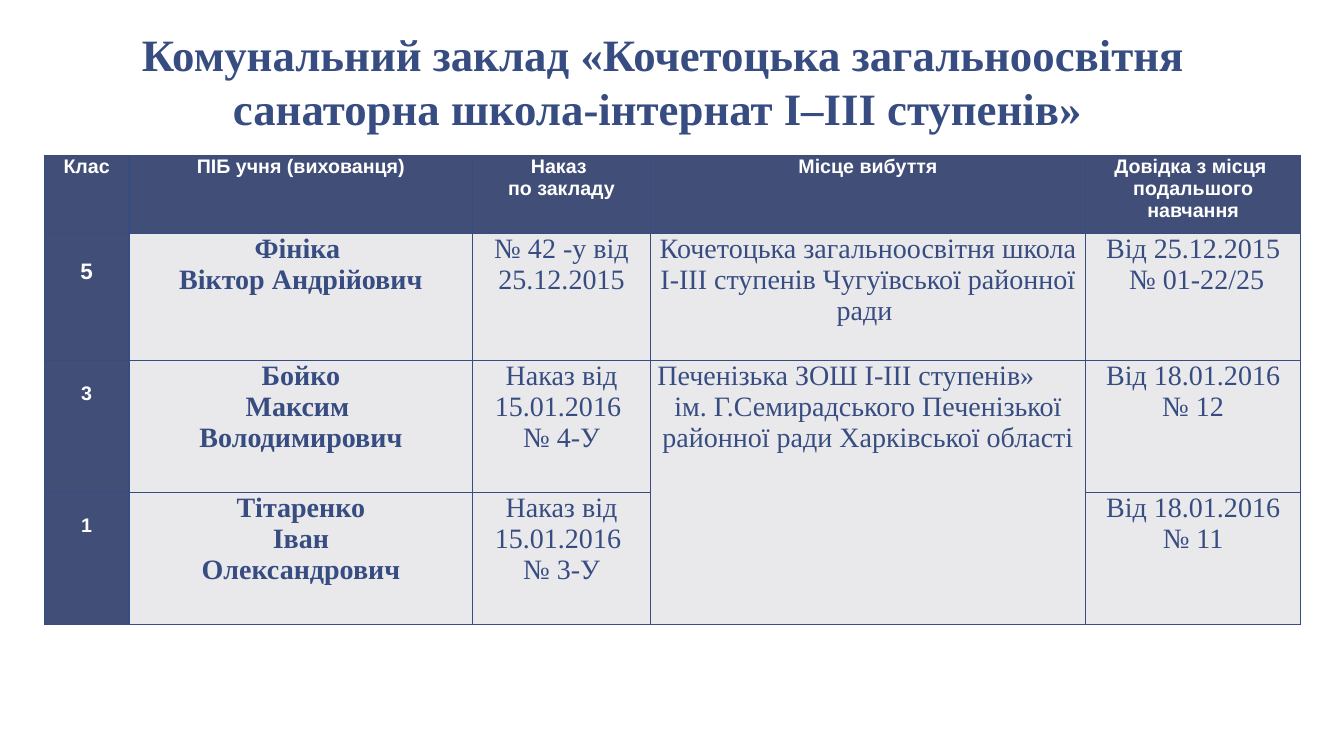
import dataclasses

import lxml.etree
import pptx
import pptx.dml.color
import pptx.enum.text
import pptx.oxml.ns
import pptx.util

Inches = pptx.util.Inches
Pt = pptx.util.Pt
CENTER = pptx.enum.text.PP_ALIGN.CENTER


@dataclasses.dataclass(frozen=True)
class Theme:
    ink: str = "374C81"
    band: str = "414E77"
    paper: str = "E9E9EC"
    white: str = "FFFFFF"
    serif: str = "Times New Roman"
    sans: str = "Arial"
    title_size: int = 32
    body_size: int = 20
    head_size: int = 14
    first_class_size: int = 16


THEME = Theme()
WIDTH, HEIGHT = 13.33, 7.5
LEFT = 0.033 * WIDTH
COLUMNS = [0.84, 3.41, 1.76, 4.32, 2.13]
ROWS = [0.77, 1.26, 1.31, 1.31]
PLACE_COLUMN = 3

TITLE = "Комунальний заклад «Кочетоцька загальноосвітня санаторна школа-інтернат І–ІІІ ступенів» "
HEADINGS = [
    "Клас",
    "ПІБ учня (вихованця)",
    "Наказ \nпо закладу",
    "Місце вибуття",
    "Довідка з місця \nподальшого навчання",
]
PUPILS = [
    ["5", "Фініка \nВіктор Андрійович", "№ 42 -у від 25.12.2015",
     "Кочетоцька загальноосвітня школа І-ІІІ ступенів Чугуївської районної ради ",
     "Від 25.12.2015\n № 01-22/25"],
    ["3", "Бойко\nМаксим \nВолодимирович", "Наказ від 15.01.2016 \n№ 4-У",
     "Печенізька ЗОШ І-ІІІ ступенів»\n"
     "ім. Г.Семирадського Печенізької районної ради Харківської області",
     "Від 18.01.2016 № 12"],
    ["1", "Тітаренко\nІван\nОлександрович", "Наказ від 15.01.2016 \n№ 3-У",
     "", "Від 18.01.2016 № 11"],
]


def color(code):
    return pptx.dml.color.RGBColor.from_string(code)


def write(frame, text, size, face, ink, bold):
    """Fill a text frame with centred paragraphs of one style."""
    frame.word_wrap = True
    frame.text = text
    for paragraph in frame.paragraphs:
        paragraph.alignment = CENTER
        paragraph.font.size = Pt(size)
        paragraph.font.name = face
        paragraph.font.bold = bold
        paragraph.font.color.rgb = color(ink)


def add_borders(cell, ink):
    properties = cell._tc.get_or_add_tcPr()
    qn = pptx.oxml.ns.qn
    for position, side in enumerate(("a:lnL", "a:lnR", "a:lnT", "a:lnB")):
        line = lxml.etree.Element(qn(side), w=str(Pt(1)))
        fill = lxml.etree.SubElement(line, qn("a:solidFill"))
        lxml.etree.SubElement(fill, qn("a:srgbClr"), val=ink)
        properties.insert(position, line)


def style_cell(cell, fill):
    cell.fill.solid()
    cell.fill.fore_color.rgb = color(fill)
    cell.margin_left = cell.margin_right = Inches(0.07)
    cell.margin_top = cell.margin_bottom = 0
    add_borders(cell, THEME.ink)


def add_title(slide):
    title = slide.shapes.add_textbox(
        Inches(LEFT), Inches(0.028 * HEIGHT), Inches(0.921 * WIDTH), Inches(0.157 * HEIGHT))
    title.text_frame.vertical_anchor = pptx.enum.text.MSO_ANCHOR.MIDDLE
    write(title.text_frame, TITLE, THEME.title_size, THEME.serif, THEME.ink, True)


def add_pupil_table(slide):
    pupils = slide.shapes.add_table(
        len(ROWS), len(COLUMNS), Inches(LEFT), Inches(0.206 * HEIGHT),
        Inches(sum(COLUMNS)), Inches(sum(ROWS))).table
    pupils.first_row = pupils.horz_banding = False
    for column, width in zip(pupils.columns, COLUMNS):
        column.width = Inches(width)
    for row, height in zip(pupils.rows, ROWS):
        row.height = Inches(height)

    for r, entries in enumerate([HEADINGS] + PUPILS):
        for c, entry in enumerate(entries):
            cell = pupils.cell(r, c)
            banded = r == 0 or c == 0
            style_cell(cell, THEME.band if banded else THEME.paper)
            if banded:
                size = THEME.first_class_size if (r, c) == (1, 0) else THEME.head_size
                write(cell.text_frame, entry, size, THEME.sans, THEME.white, True)
                # Class numbers sit one line below the top of the row
                if r > 0:
                    cell.margin_top = Pt(size * 1.15)
            else:
                write(cell.text_frame, entry, THEME.body_size, THEME.serif, THEME.ink, c == 1)

    # The last two pupils share one destination
    destination = pupils.cell(2, PLACE_COLUMN)
    destination.merge(pupils.cell(3, PLACE_COLUMN))
    destination.text_frame.paragraphs[0].alignment = pptx.enum.text.PP_ALIGN.LEFT


def main():
    deck = pptx.Presentation()
    deck.slide_width, deck.slide_height = Inches(WIDTH), Inches(HEIGHT)
    slide = deck.slides.add_slide(deck.slide_layouts[6])
    add_title(slide)
    add_pupil_table(slide)
    deck.save("out.pptx")


if __name__ == "__main__":
    main()
